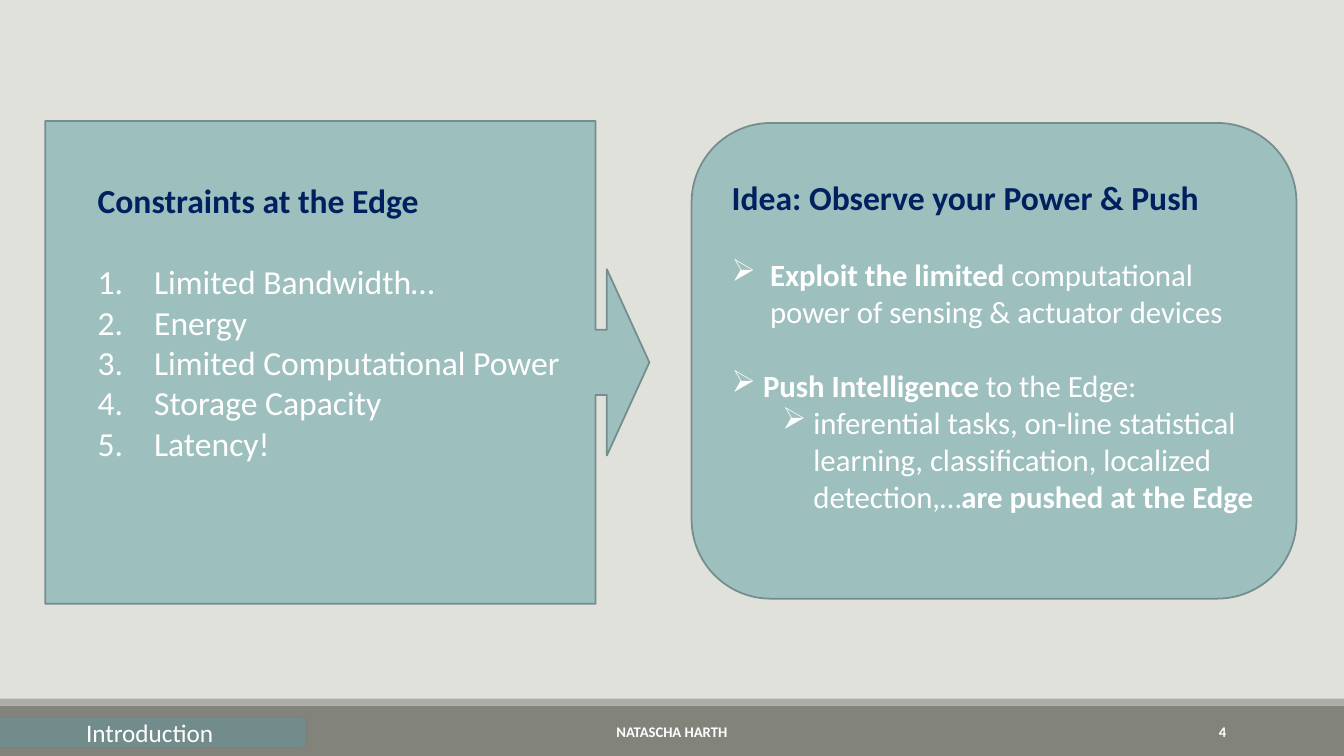
"""Build the slide on edge constraints and the idea of pushing intelligence."""
import pptx
import pptx.dml.color
import pptx.enum.shapes
import pptx.enum.text
import pptx.util
from dataclasses import dataclass
from lxml import etree

SHAPE = pptx.enum.shapes.MSO_SHAPE
ALIGN = pptx.enum.text.PP_ALIGN
ANCHOR = pptx.enum.text.MSO_ANCHOR
NAMESPACE = "http://schemas.openxmlformats.org/drawingml/2006/main"


@dataclass(frozen=True)
class Theme:
    """Colours, font and type sizes of the slide."""
    background: str = "E1E1DB"
    band: str = "82847C"
    stripe: str = "ACADA8"
    panel: str = "9DBFBE"
    panel_edge: str = "748D8D"
    tab: str = "728C8B"
    tab_edge: str = "7F807C"
    heading: str = "002060"
    text: str = "FFFFFF"
    font: str = "Calibri"
    large: float = 24
    medium: float = 22
    label: float = 18
    small: float = 10.5
    edge_width: float = 1.25


def colour(value):
    """Turn a hex string into a colour."""
    return pptx.dml.color.RGBColor.from_string(value)


def apply(target, values):
    """Set each attribute of the target from a dict."""
    for name, value in values.items():
        setattr(target, name, value)


class Painter:
    """Draws on one slide, with lengths as percentages of its size."""

    def __init__(self, deck, theme):
        """Add a blank slide with a plain background."""
        self.deck = deck
        self.theme = theme
        self.page = deck.slides.add_slide(deck.slide_layouts[6])
        fill = self.page.background.fill
        fill.solid()
        fill.fore_color.rgb = colour(theme.background)

    def across(self, share):
        """Convert a percentage of the slide width."""
        return round(self.deck.slide_width * share / 100)

    def frame(self, left, top, width, height):
        """Convert a frame of percentages into lengths."""
        down = self.deck.slide_height / 100
        return (self.across(left), round(top * down),
                self.across(width), round(height * down))

    def shape(self, kind, place, fill, edge=None, adjustments=()):
        """Draw a filled preset shape."""
        shape = self.page.shapes.add_shape(kind, *self.frame(*place))
        shape.shadow.inherit = False
        shape.fill.solid()
        shape.fill.fore_color.rgb = colour(fill)
        if edge:
            shape.line.color.rgb = colour(edge)
            shape.line.width = pptx.util.Pt(self.theme.edge_width)
        else:
            shape.line.fill.background()
        for index, value in enumerate(adjustments):
            shape.adjustments[index] = value
        return shape

    def box(self, place, anchor=ANCHOR.TOP):
        """Add a wrapping text box and return its text frame."""
        frame = self.page.shapes.add_textbox(*self.frame(*place)).text_frame
        apply(frame, {"word_wrap": True, "vertical_anchor": anchor})
        return frame

    def para(self, frame, spans, size, tint=None, align=ALIGN.LEFT, before=0):
        """Write one paragraph of (text, bold) spans."""
        first = frame.paragraphs[0]
        para = frame.add_paragraph() if first.runs else first
        apply(para, {"alignment": align, "space_before": pptx.util.Pt(before)})
        for text, bold in spans:
            span = para.add_run()
            span.text = text
            apply(span.font, {"name": self.theme.font, "bold": bold,
                              "size": pptx.util.Pt(size)})
            span.font.color.rgb = colour(tint or self.theme.text)
        return para

    def bullet(self, para, margin, hang, tag, **values):
        """Give a paragraph a hanging bullet or number."""
        properties = para._p.get_or_add_pPr()
        properties.set("marL", str(self.across(margin)))
        properties.set("indent", str(-self.across(hang)))
        etree.SubElement(properties, f"{{{NAMESPACE}}}{tag}", **values)


def main():
    """Compose the slide and save it."""
    deck = pptx.Presentation()
    apply(deck, {"slide_width": pptx.util.Inches(13.33),
                 "slide_height": pptx.util.Inches(7.5)})
    theme = Theme()
    painter = Painter(deck, theme)

    painter.shape(SHAPE.RECTANGLE, (0, 93.33, 100, 6.67), theme.band)
    painter.shape(SHAPE.RECTANGLE, (0, 92.4, 100, 0.93), theme.stripe)
    for text, left, width, align in (("NATASCHA HARTH", 30.23, 39.53, ALIGN.CENTER),
                                     ("4", 81.25, 10.73, ALIGN.RIGHT)):
        footer = painter.box((left, 94.13, width, 5.33), ANCHOR.MIDDLE)
        painter.para(footer, [(text, True)], theme.small, align=align)

    painter.shape(SHAPE.RIGHT_ARROW_CALLOUT, (3.38, 16, 44.94, 63.87), theme.panel,
                  theme.panel_edge, (0.135, 0.193, 0.088, 0.911))
    constraints = painter.box((6.53, 23.2, 37, 39.07))
    painter.para(constraints, [("Constraints at the Edge", True)],
                 theme.large, theme.heading)
    for index, text in enumerate(("Limited Bandwidth…", "Energy",
                                  "Limited Computational Power",
                                  "Storage Capacity", "Latency!")):
        para = painter.para(constraints, [(text, False)], theme.large,
                            before=0 if index else 29)
        painter.bullet(para, 4.2, 4.2, "buAutoNum", type="arabicPeriod")

    painter.shape(SHAPE.ROUNDED_RECTANGLE, (51.46, 16.27, 45.01, 62.93),
                  theme.panel, theme.panel_edge)
    idea = painter.box((53.71, 22.8, 40.51, 50.67))
    painter.para(idea, [("Idea: Observe your Power & Push", True)],
                 theme.large, theme.heading)
    points = (
        ([("Exploit the limited ", True),
          ("computational power of sensing & actuator devices", False)], 2.85, 2.85, 27),
        ([("Push Intelligence", True), (" to the Edge:", False)], 2.33, 2.33, 27),
        ([("inferential tasks, on-line statistical learning, classification, "
           "localized detection,…", False),
          ("are pushed at the Edge", True)], 6.08, 2.33, 0),
    )
    for spans, margin, hang, before in points:
        para = painter.para(idea, spans, theme.medium, before=before)
        para.level = 1 if margin > hang else 0
        painter.bullet(para, margin, hang, "buChar", char="➢")

    tab = painter.shape(SHAPE.ROUNDED_RECTANGLE, (-0.53, 94.8, 23.33, 4.13),
                        theme.tab, theme.tab_edge)
    tab.text_frame.vertical_anchor = ANCHOR.MIDDLE
    painter.para(tab.text_frame, [("Introduction", False)], theme.label,
                 align=ALIGN.CENTER)

    deck.save("out.pptx")


if __name__ == "__main__":
    main()
